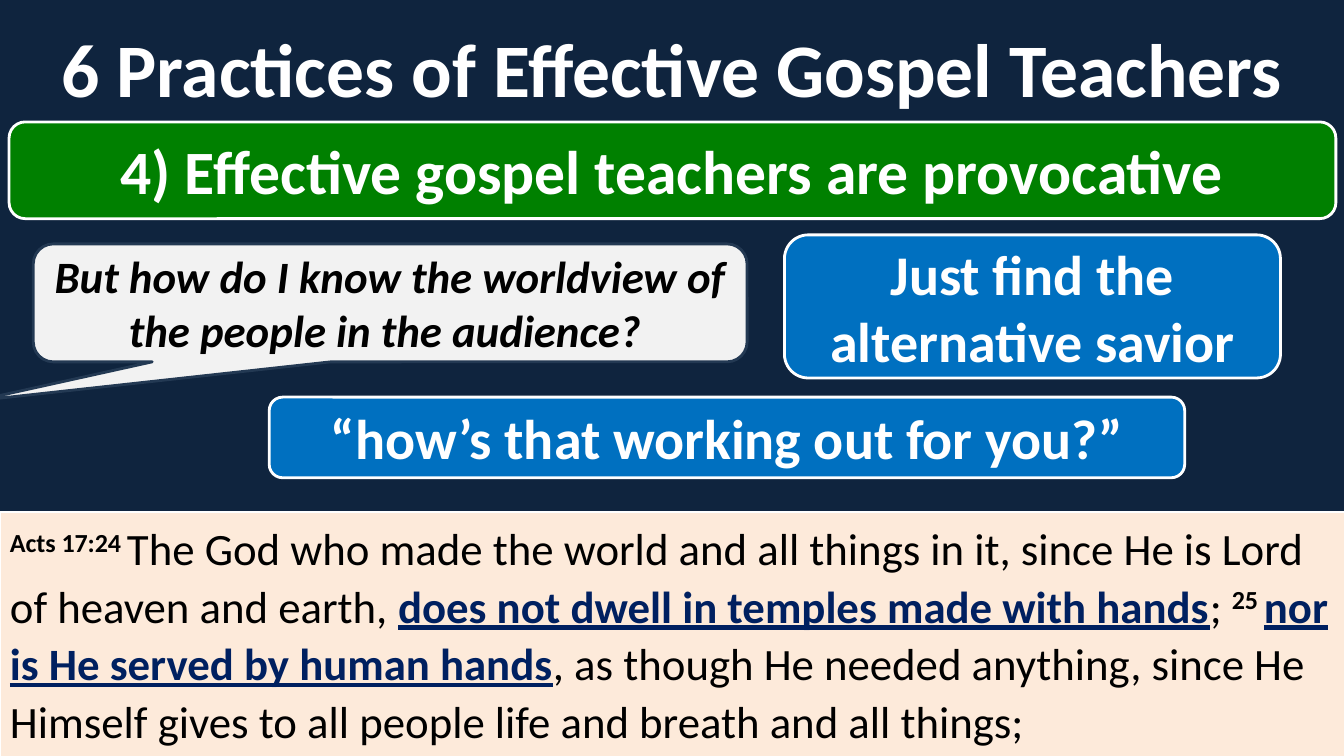
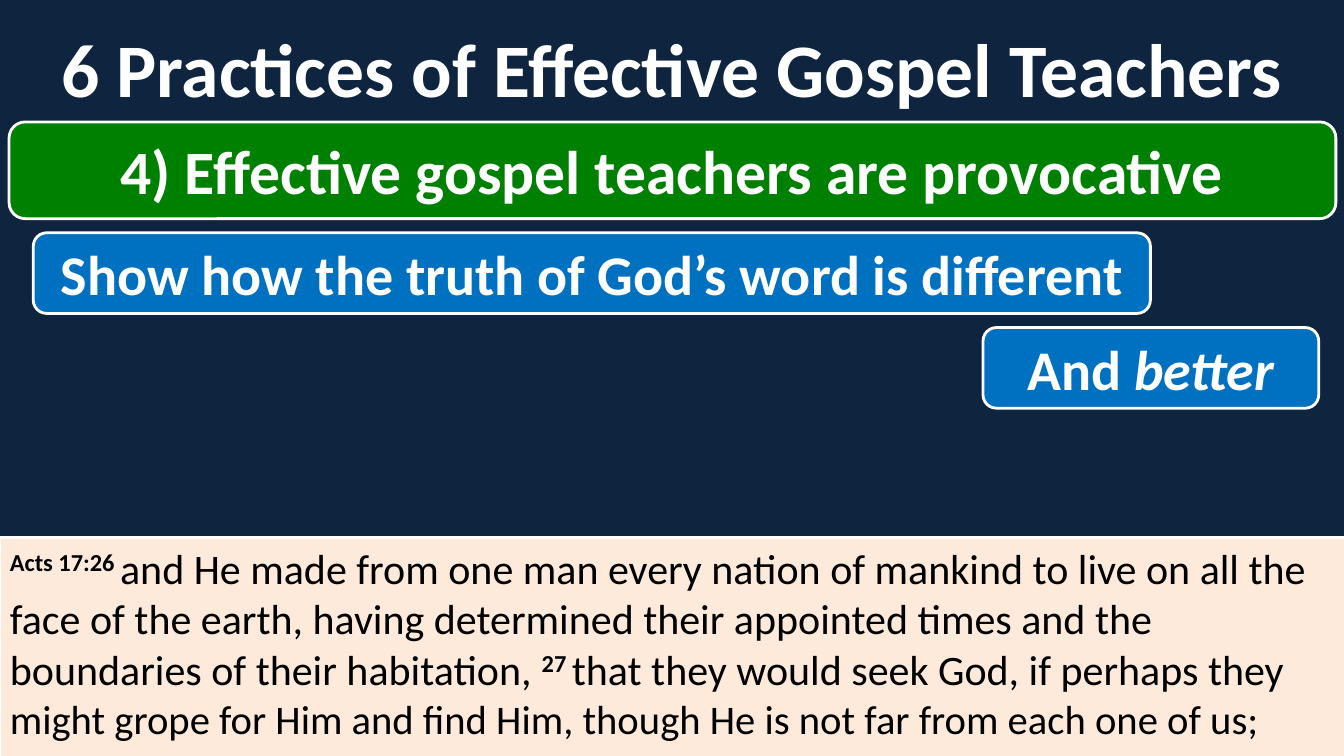
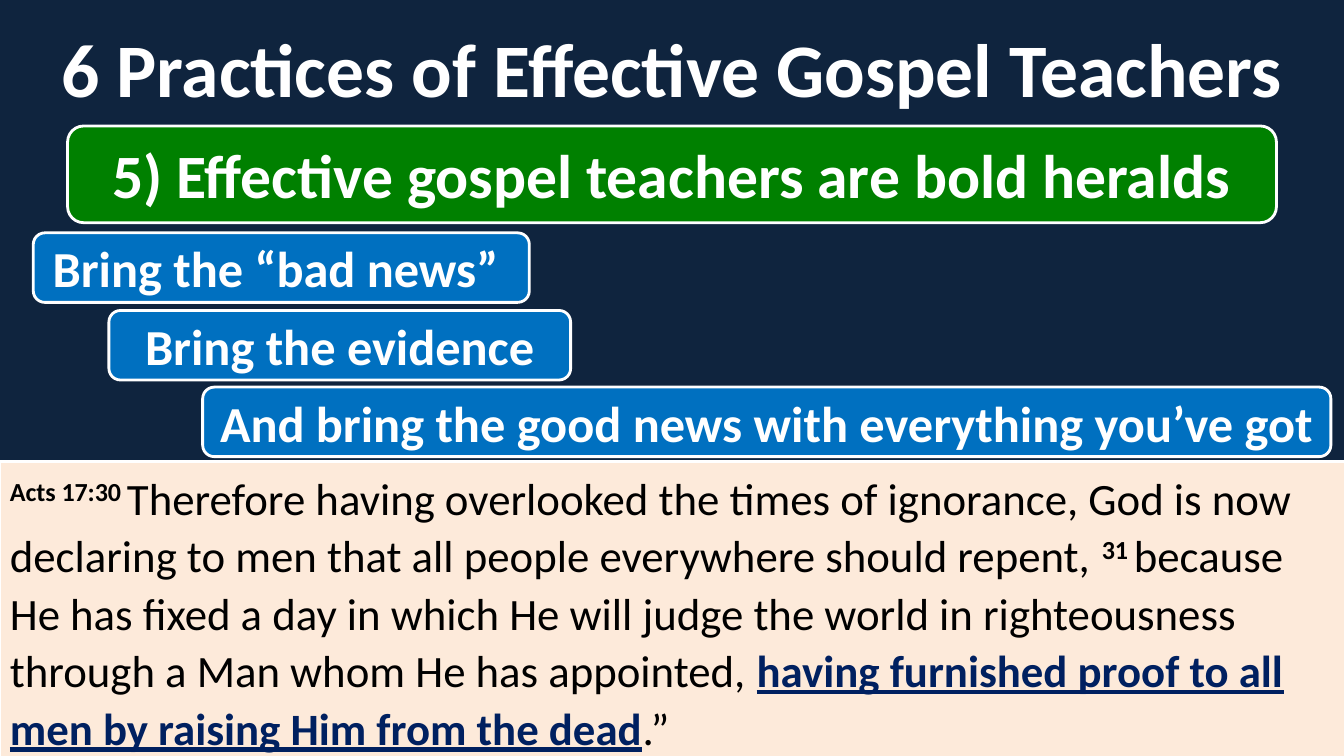
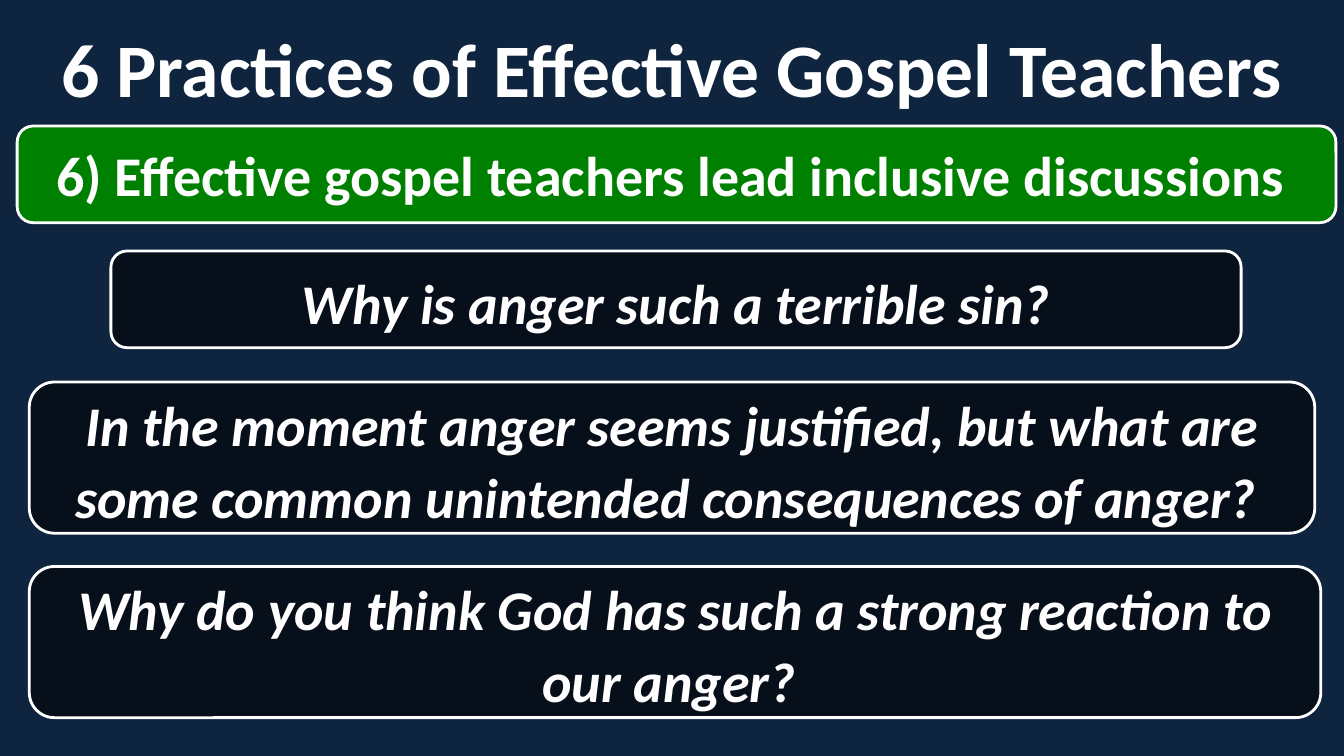
from dataclasses import dataclass
from typing import Optional

from lxml.etree import SubElement
from pptx import Presentation
from pptx.dml.color import RGBColor
from pptx.enum.shapes import MSO_SHAPE as Preset
from pptx.enum.text import MSO_ANCHOR as Anchor, MSO_AUTO_SIZE as AutoSize, PP_ALIGN as Align
from pptx.oxml.ns import qn
from pptx.util import Inches, Pt

NAVY = RGBColor(0x0F, 0x24, 0x3E)
GREEN = RGBColor(0x00, 0x80, 0x00)
BLUE = RGBColor(0x00, 0x70, 0xC0)
CREAM = RGBColor(0xFD, 0xEA, 0xDA)
PALE_GRAY = RGBColor(0xF2, 0xF2, 0xF2)
SLATE = RGBColor(0x23, 0x39, 0x53)
DARK_BLUE = RGBColor(0x00, 0x20, 0x60)
WHITE = RGBColor(0xFF, 0xFF, 0xFF)
BLACK = RGBColor(0x00, 0x00, 0x00)

FONT = "Calibri"
SLIDE_WIDTH, SLIDE_HEIGHT = 13.33, 7.5
VERSE_WIDTH, VERSE_BOTTOM = 13.36, 7.52  # the border runs just past the edges
TITLE = "6 Practices of Effective Gospel Teachers"


@dataclass
class BoxStyle:
    fill: RGBColor
    size: int
    preset: Preset = Preset.ROUNDED_RECTANGLE
    line: RGBColor = WHITE
    color: RGBColor = WHITE
    bold: bool = True
    italic: bool = False
    align: Align = Align.CENTER
    anchor: Anchor = Anchor.MIDDLE
    spacing: float = 1.0
    opacity: Optional[int] = None
    adjustments: tuple = ()


VERSE = dict(fill=CREAM, preset=Preset.RECTANGLE, color=BLACK, bold=False,
             align=Align.LEFT, anchor=Anchor.TOP)
STYLES = {
    "banner": BoxStyle(GREEN, 44),
    "long banner": BoxStyle(GREEN, 40),
    "point": BoxStyle(BLUE, 40),
    "small point": BoxStyle(BLUE, 36),
    "question": BoxStyle(BLACK, 40, italic=True, spacing=1.07, opacity=58),
    "callout": BoxStyle(PALE_GRAY, 32, Preset.ROUNDED_RECTANGULAR_CALLOUT, SLATE, BLACK,
                        italic=True, adjustments=(-0.58, 0.83, 0.17)),
    "verse": BoxStyle(size=32, spacing=1.07, **VERSE),
    "small verse": BoxStyle(size=30, **VERSE),
}


def verse_area(top):
    return 0, top, VERSE_WIDTH, VERSE_BOTTOM - top


# Each box: style, (left, top, width, height), text or a list of (text, role) runs
PROVOCATIVE = ("banner", (0.09, 1.21, 13.16, 0.96),
               "4) Effective gospel teachers are provocative")
SLIDES = [
    [
        PROVOCATIVE,
        ("point", (7.78, 2.33, 4.92, 1.42), "Just find the alternative savior"),
        ("point", (2.67, 3.94, 9.08, 0.8), "“how’s that working out for you?”"),
        ("callout", (0.33, 2.42, 7.08, 1.17),
         "But how do I know the worldview of the people in the audience? "),
        ("verse", verse_area(5.08), [
            ("Acts 17:24 ", "number"),
            ("The God who made the world and all things in it, since He is Lord "
             "of heaven and earth, ", "plain"),
            ("does not dwell in temples made with hands", "key"),
            ("; ", "plain"),
            ("25 ", "number"),
            ("nor is He served by human hands", "key"),
            (", as though He needed anything, since He Himself gives to all people "
             "life and breath and all things;", "plain"),
        ]),
    ],
    [
        PROVOCATIVE,
        ("small verse", verse_area(5.33), [
            ("Acts 17:26 ", "number"),
            ("and He made from one man every nation of mankind to live on all the "
             "face of the earth, having determined their appointed times and the "
             "boundaries of their habitation, ", "plain"),
            ("27 ", "number"),
            ("that they would seek God, if perhaps they ", "plain"),
            ("might grope for Him and find Him, though He is not far from each "
             "one of us;", "smaller"),
        ]),
        ("point", (0.33, 2.31, 11.08, 0.8), "Show how the truth of God’s word is different"),
        ("point", (9.75, 3.25, 3.33, 0.8), [("And ", "plain"), ("better", "emphasis")]),
    ],
    [
        ("banner", (0.67, 1.25, 11.99, 0.96), "5) Effective gospel teachers are bold heralds"),
        ("verse", verse_area(4.58), [
            ("Acts 17:30 ", "number"),
            ("Therefore having overlooked the times of ignorance, God is now declaring "
             "to men that all people everywhere should repent, ", "plain"),
            ("31 ", "number"),
            ("because He has fixed a day in which He will judge the world in "
             "righteousness through a Man whom He has appointed, ", "plain"),
            ("having furnished proof to all men by raising Him from the dead", "key"),
            (".”", "plain"),
        ]),
        ("small point", (0.33, 2.31, 4.92, 0.69), "Bring the “bad news” "),
        ("small point", (1.08, 3.08, 4.58, 0.69), "Bring the evidence"),
        ("small point", (2.01, 3.84, 11.19, 0.69),
         "And bring the good news with everything you’ve got"),
    ],
    [
        ("long banner", (0.17, 1.25, 13.08, 0.96),
         "6) Effective gospel teachers lead inclusive discussions "),
        ("question", (1.1, 2.49, 11.21, 0.96), "Why is anger such a terrible sin?"),
        ("question", (0.29, 3.79, 12.75, 1.5),
         "In the moment anger seems justified, but what are some common unintended "
         "consequences of anger? "),
        ("question", (0.29, 5.62, 12.81, 1.5),
         "Why do you think God has such a strong reaction to our anger? "),
    ],
]


def set_font(font, size, color, bold=True, italic=False):
    font.name, font.size, font.bold, font.italic = FONT, Pt(size), bold, italic
    font.color.rgb = color


def apply_role(run, role):
    """Change a run from its box's style to that of its role."""
    font = run.font
    if role == "number":
        font.bold = True
        run._r.get_or_add_rPr().set("baseline", "30000")
    elif role == "key":
        font.bold = font.underline = True
        font.color.rgb = DARK_BLUE
    elif role == "emphasis":
        font.italic = True
    elif role == "smaller":
        font.size -= Pt(1)


def add_box(slide, style_name, area, content):
    style = STYLES[style_name]
    shape = slide.shapes.add_shape(style.preset, *map(Inches, area))
    shape.shadow.inherit = False
    for index, value in enumerate(style.adjustments):
        shape.adjustments[index] = value
    shape.fill.solid()
    shape.fill.fore_color.rgb = style.fill
    if style.opacity is not None:
        color = shape._element.spPr.find(qn("a:solidFill")).find(qn("a:srgbClr"))
        SubElement(color, qn("a:alpha"), val=str(style.opacity * 1000))
    shape.line.color.rgb = style.line
    shape.line.width = Pt(2)

    text_frame = shape.text_frame
    text_frame.word_wrap = True
    text_frame.vertical_anchor = style.anchor
    paragraph = text_frame.paragraphs[0]
    paragraph.alignment = style.align
    paragraph.line_spacing = style.spacing
    runs = [(content, "plain")] if isinstance(content, str) else content
    for text, role in runs:
        run = paragraph.add_run()
        run.text = text
        set_font(run.font, style.size, style.color, style.bold, style.italic)
        apply_role(run, role)


def add_title(slide):
    title = slide.shapes.title
    text_frame = title.text_frame
    text_frame.text = TITLE
    text_frame.auto_size = AutoSize.NONE
    text_frame.vertical_anchor = Anchor.TOP
    paragraph = text_frame.paragraphs[0]
    paragraph.alignment = Align.CENTER
    set_font(paragraph.runs[0].font, 54, WHITE)


def main():
    presentation = Presentation()
    presentation.slide_width = Inches(SLIDE_WIDTH)
    presentation.slide_height = Inches(SLIDE_HEIGHT)
    background = presentation.slide_master.background.fill
    background.solid()
    background.fore_color.rgb = NAVY

    layout = presentation.slide_layouts.get_by_name("Title Only")
    layout_title = layout.placeholders[0]
    layout_title.left, layout_title.top = Inches(0), Inches(0.17)
    layout_title.width, layout_title.height = Inches(SLIDE_WIDTH), Inches(1.08)

    for boxes in SLIDES:
        slide = presentation.slides.add_slide(layout)
        add_title(slide)
        for box in boxes:
            add_box(slide, *box)
    presentation.save("out.pptx")


if __name__ == "__main__":
    main()
